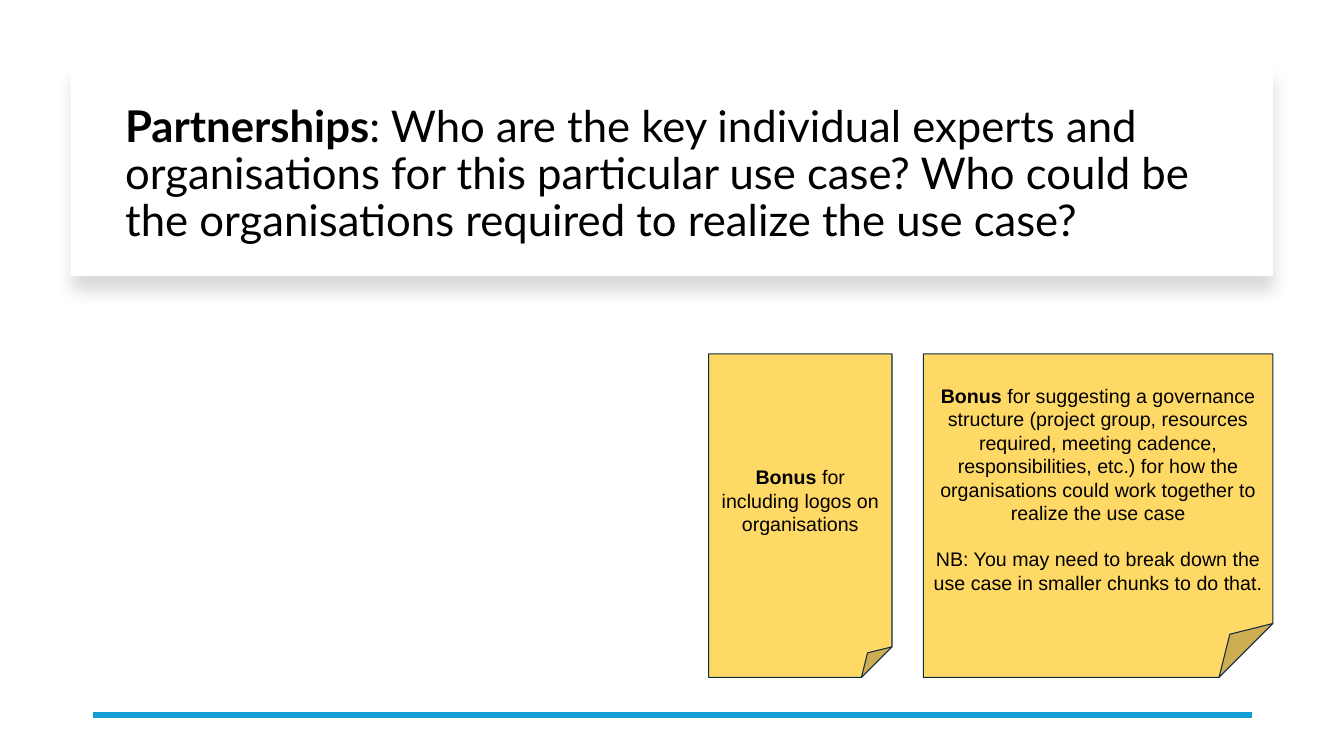
import dataclasses

import lxml.etree
import pptx
import pptx.dml.color
import pptx.enum.shapes
import pptx.enum.text
import pptx.oxml.ns
import pptx.shapes.autoshape
import pptx.slide
import pptx.text.text
import pptx.util

Cm = pptx.util.Cm
Pt = pptx.util.Pt
qn = pptx.oxml.ns.qn
SHAPE = pptx.enum.shapes.MSO_SHAPE
ALIGN = pptx.enum.text.PP_ALIGN

COLOURS = {
    "paper": "FFFFFF",
    "ink": "000000",
    "note": "FFD966",
    "note_edge": "0E2841",
    "rule": "0F9ED5",
}
NOTE_TOP, NOTE_HEIGHT = 8.92, 8.15


@dataclasses.dataclass(frozen=True)
class Passage:
    lead: str
    rest: str


@dataclasses.dataclass(frozen=True)
class StickyNote:
    left: float
    width: float
    passages: tuple[Passage, ...]


QUESTION = Passage(
    "Partnerships",
    ": Who are the key individual experts and organisations for this particular use case? "
    "Who could be the organisations required to realize the use case?",
)
NOTES = (
    StickyNote(17.86, 4.62, (Passage("Bonus", " for including logos on organisations"),)),
    StickyNote(23.27, 8.81, (
        Passage(
            "Bonus",
            " for suggesting a governance structure (project group, resources required, "
            "meeting cadence, responsibilities, etc.) for how the organisations could work "
            "together to realize the use case",
        ),
        Passage("", "NB: You may need to break down the use case in smaller chunks to do that."),
    )),
)


def colour(name: str) -> pptx.dml.color.RGBColor:
    return pptx.dml.color.RGBColor.from_string(COLOURS[name])


def write_passage(paragraph: pptx.text.text._Paragraph, passage: Passage,
                  typeface: str, size: float) -> None:
    """Write a bold lead followed by regular text."""
    paragraph.font.name = typeface
    paragraph.font.size = Pt(size)
    paragraph.font.color.rgb = colour("ink")
    for words, bold in ((passage.lead, True), (passage.rest, False)):
        if words:
            run = paragraph.add_run()
            run.text = words
            run.font.bold = bold


def add_soft_shadow(card: pptx.shapes.autoshape.Shape) -> None:
    card.shadow.inherit = False
    effects = card.element.spPr.find(qn("a:effectLst"))
    shadow = lxml.etree.SubElement(
        effects, qn("a:outerShdw"), blurRad=str(Pt(11)), dist=str(Pt(10)),
        dir="5400000", algn="t", rotWithShape="0",
    )
    tint = lxml.etree.SubElement(shadow, qn("a:srgbClr"), val=COLOURS["ink"])
    lxml.etree.SubElement(tint, qn("a:alpha"), val="15000")


def add_question(slide: pptx.slide.Slide) -> None:
    card = slide.shapes.add_shape(SHAPE.RECTANGLE, Cm(1.78), Cm(1.7), Cm(30.3), Cm(5.26))
    card.fill.solid()
    card.fill.fore_color.rgb = colour("paper")
    card.line.fill.background()
    add_soft_shadow(card)

    question = slide.shapes.title
    card.element.addnext(question.element)
    question.left, question.top = Cm(2.9), Cm(2.26)
    question.width, question.height = Cm(27.61), Cm(4.32)
    frame = question.text_frame
    frame.word_wrap = True
    frame.auto_size = pptx.enum.text.MSO_AUTO_SIZE.NONE
    frame.vertical_anchor = pptx.enum.text.MSO_ANCHOR.MIDDLE
    paragraph = frame.paragraphs[0]
    paragraph.alignment = ALIGN.LEFT
    paragraph.line_spacing = 0.9
    write_passage(paragraph, QUESTION, "Lato", 31.2)


def add_rule(slide: pptx.slide.Slide) -> None:
    rule = slide.shapes.add_connector(
        pptx.enum.shapes.MSO_CONNECTOR.STRAIGHT, Cm(31.55), Cm(18.01), Cm(2.34), Cm(18.01)
    )
    rule.line.color.rgb = colour("rule")
    rule.line.width = Pt(4.5)
    lxml.etree.SubElement(rule.element.spPr, qn("a:effectLst"))


def add_note(slide: pptx.slide.Slide, note: StickyNote) -> None:
    sheet = slide.shapes.add_shape(
        SHAPE.FOLDED_CORNER, Cm(note.left), Cm(NOTE_TOP), Cm(note.width), Cm(NOTE_HEIGHT)
    )
    sheet.shadow.inherit = False
    sheet.fill.solid()
    sheet.fill.fore_color.rgb = colour("note")
    sheet.line.color.rgb = colour("note_edge")
    sheet.line.width = Pt(0.75)

    frame = sheet.text_frame
    frame.word_wrap = True
    frame.vertical_anchor = pptx.enum.text.MSO_ANCHOR.MIDDLE
    frame.margin_left = frame.margin_right = Cm(0.25)
    frame.margin_top = frame.margin_bottom = Cm(0.25)
    for index, passage in enumerate(note.passages):
        paragraph = frame.add_paragraph() if index else frame.paragraphs[0]
        paragraph.alignment = ALIGN.CENTER
        paragraph.space_before = Pt(16 if index else 0)
        write_passage(paragraph, passage, "Arial", 14)


def main() -> None:
    deck = pptx.Presentation()
    deck.slide_width, deck.slide_height = Cm(33.87), Cm(19.05)
    slide = deck.slides.add_slide(deck.slide_layouts.get_by_name("Title Only"))
    add_question(slide)
    add_rule(slide)
    for note in NOTES:
        add_note(slide, note)
    deck.save("out.pptx")


if __name__ == "__main__":
    main()
